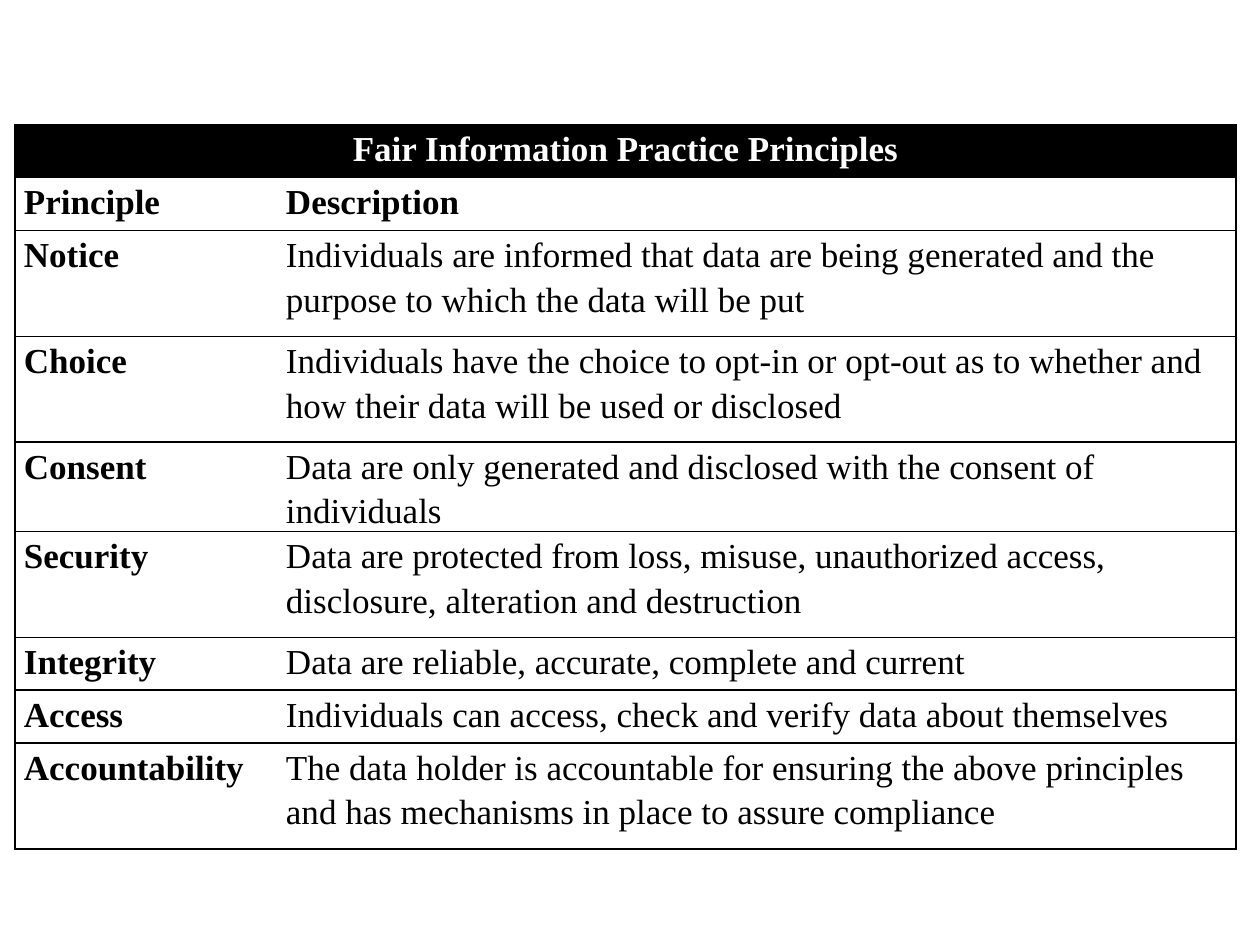
import pptx
import pptx.dml.color
import pptx.enum.shapes
import pptx.enum.text
import pptx.oxml
import pptx.oxml.ns
import pptx.util

COLOURS = {"ink": "000000", "paper": "FFFFFF"}
SLIDE_WIDTH, SLIDE_HEIGHT = pptx.util.Inches(10), pptx.util.Inches(7.5)
LINE_HEIGHT = 0.42
COLUMN_SHARES = (0.208, 0.761)
TITLE = "Fair Information Practice Principles"
HEADINGS = ("Principle", "Description")
PRINCIPLES = (
    ("Notice", "Individuals are informed that data are being generated and the purpose to which the data will be put", 2),
    ("Choice", "Individuals have the choice to opt-in or opt-out as to whether and how their data will be used or disclosed", 2),
    ("Consent", "Data are only generated and disclosed with the consent of individuals", 1),
    ("Security", "Data are protected from loss, misuse, unauthorized access, disclosure, alteration and destruction", 2),
    ("Integrity", "Data are reliable, accurate, complete and current", 1),
    ("Access", "Individuals can access, check and verify data about themselves", 1),
    ("Accountability", "The data holder is accountable for ensuring the above principles and has mechanisms in place to assure compliance", 2),
)
CELL_FORMAT = {
    "margin_left": pptx.util.Inches(0.07),
    "margin_right": pptx.util.Inches(0.07),
    "margin_top": 0,
    "margin_bottom": 0,
    "vertical_anchor": pptx.enum.text.MSO_ANCHOR.TOP,
}
FONT_FORMAT = {"name": "Times New Roman", "size": pptx.util.Pt(20)}


def rgb(role):
    """Return the colour that belongs to a role."""
    return pptx.dml.color.RGBColor.from_string(COLOURS[role])


def apply_format(target, values):
    """Set every attribute in a dict of format values."""
    for attribute, value in values.items():
        setattr(target, attribute, value)


def add_backdrop(slide):
    """Cover the slide with a plain white panel."""
    backdrop = slide.shapes.add_shape(
        pptx.enum.shapes.MSO_SHAPE.RECTANGLE, 0, 0, SLIDE_WIDTH, SLIDE_HEIGHT
    )
    backdrop.shadow.inherit = False
    backdrop.fill.solid()
    backdrop.fill.fore_color.rgb = rgb("paper")
    backdrop.line.color.rgb = rgb("paper")
    backdrop.line.width = pptx.util.Pt(2)


def set_borders(cell, drawn):
    """Rule the drawn sides of a cell and leave the others bare."""
    properties = cell._tc.get_or_add_tcPr()
    for position, side in enumerate("LRTB"):
        if side in drawn:
            paint = f'<a:solidFill><a:srgbClr val="{COLOURS["ink"]}"/></a:solidFill>'
        else:
            paint = "<a:noFill/>"
        border = pptx.oxml.parse_xml(
            f'<a:ln{side} {pptx.oxml.ns.nsdecls("a")} w="{pptx.util.Pt(1)}">{paint}</a:ln{side}>'
        )
        properties.insert(position, border)


def write_cell(cell, wording, bold, role="ink"):
    """Write one formatted paragraph into a cell."""
    apply_format(cell, CELL_FORMAT)
    paragraph = cell.text_frame.paragraphs[0]
    paragraph.line_spacing = 1.15
    run = paragraph.add_run()
    run.text = wording
    apply_format(run.font, {**FONT_FORMAT, "bold": bold})
    run.font.color.rgb = rgb(role)
    return paragraph


def write_title(table):
    """Fill the merged black title row."""
    title, spanned = table.cell(0, 0), table.cell(0, 1)
    title.merge(spanned)
    paragraph = write_cell(title, TITLE, True, "paper")
    paragraph.alignment = pptx.enum.text.PP_ALIGN.CENTER
    for cell in (title, spanned):
        cell.fill.solid()
        cell.fill.fore_color.rgb = rgb("ink")
        set_borders(cell, "LRTB")


def add_principles(slide):
    """Add the table of principles with its title and headings."""
    entries = [(*HEADINGS, 1), *PRINCIPLES]
    line_counts = [1] + [lines for _, _, lines in entries]
    table = slide.shapes.add_table(
        len(line_counts),
        len(COLUMN_SHARES),
        int(SLIDE_WIDTH * 0.012),
        int(SLIDE_HEIGHT * 0.132),
        int(SLIDE_WIDTH * sum(COLUMN_SHARES)),
        pptx.util.Inches(LINE_HEIGHT * sum(line_counts)),
    ).table
    apply_format(table, {"first_row": False, "horz_banding": False})
    for column, share in zip(table.columns, COLUMN_SHARES):
        column.width = int(SLIDE_WIDTH * share)
    for row, lines in zip(table.rows, line_counts):
        row.height = pptx.util.Inches(LINE_HEIGHT * lines)
    write_title(table)
    for row, (principle, description, _) in enumerate(entries, start=1):
        parts = ((principle, True, "LTB"), (description, row == 1, "RTB"))
        for column, (wording, bold, sides) in enumerate(parts):
            cell = table.cell(row, column)
            write_cell(cell, wording, bold)
            cell.fill.background()
            set_borders(cell, sides)


def main():
    """Build and save the slide."""
    presentation = pptx.Presentation()
    apply_format(presentation, {"slide_width": SLIDE_WIDTH, "slide_height": SLIDE_HEIGHT})
    slide = presentation.slides.add_slide(presentation.slide_layouts[6])
    add_backdrop(slide)
    add_principles(slide)
    presentation.save("out.pptx")


if __name__ == "__main__":
    main()
